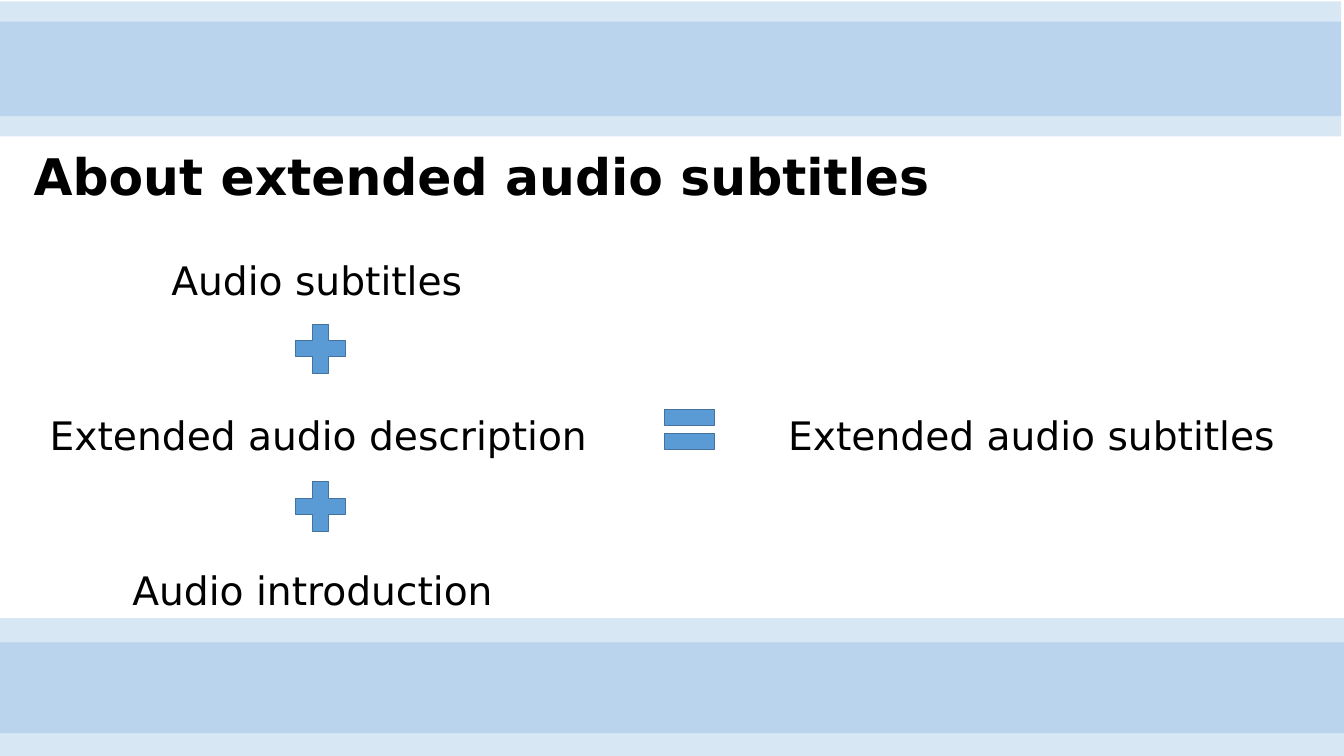
from dataclasses import dataclass

from lxml import etree
from pptx import Presentation
from pptx.dml.color import RGBColor
from pptx.enum.shapes import MSO_SHAPE
from pptx.enum.text import MSO_ANCHOR, MSO_AUTO_SIZE, PP_ALIGN
from pptx.oxml.ns import qn
from pptx.slide import Slide
from pptx.text.text import TextFrame
from pptx.util import Inches, Pt

RECTANGLE, PLUS, EQUAL = MSO_SHAPE.RECTANGLE, MSO_SHAPE.MATH_PLUS, MSO_SHAPE.MATH_EQUAL
MIDDLE, TOP = MSO_ANCHOR.MIDDLE, MSO_ANCHOR.TOP
NO_AUTOFIT, LEFT = MSO_AUTO_SIZE.NONE, PP_ALIGN.LEFT

BLUE = RGBColor(0x5B, 0x9B, 0xD5)
DARK_BLUE = RGBColor(0x43, 0x73, 0x9E)
BLACK = RGBColor(0x00, 0x00, 0x00)
FONT = "DejaVu Sans"

# The slide is a grid of square cells.
COLUMNS, ROWS = 20, 11.25
CELL = Inches(1)
BAND_ROWS = 1.71
BAND_ALPHA = 24
TERM_ROWS = 1.07
FIRST_TERM, TERM_STEP = 3.39, 2.31
FIRST_PLUS, PLUS_STEP = 4.69, 2.35


@dataclass(frozen=True)
class Box:
    col: float
    row: float
    cols: float
    rows: float

    def emu(self) -> tuple[int, ...]:
        return tuple(round(n * CELL) for n in (self.col, self.row, self.cols, self.rows))


@dataclass(frozen=True)
class Term:
    text: str
    col: float
    cols: float
    step: int


BANDS = [
    Box(0, 9.56, COLUMNS, BAND_ROWS),
    Box(0, 9.2, COLUMNS, BAND_ROWS),
    Box(-0.04, 0.02, COLUMNS, BAND_ROWS),
    Box(-0.04, 0.32, COLUMNS, BAND_ROWS),
]
TERMS = [
    Term("Audio subtitles", 2.4, 4.74, 0),
    Term("Extended audio description", 0.59, 8.35, 1),
    Term("Audio introduction", 1.82, 5.9, 2),
    Term("Extended audio subtitles", 11.58, 7.67, 1),
]
OPERATORS = [
    (PLUS, Box(4.27, FIRST_PLUS, 1, 1)),
    (PLUS, Box(4.27, FIRST_PLUS + PLUS_STEP, 1, 1)),
    (EQUAL, Box(9.76, 5.89, 1, 1)),
]


def add_band(s: Slide, box: Box) -> None:
    sp = s.shapes.add_shape(RECTANGLE, *box.emu())
    sp.shadow.inherit = False
    sp.fill.solid()
    sp.fill.fore_color.rgb = BLUE
    color = sp.fill._xPr.find(qn("a:solidFill"))[0]
    etree.SubElement(color, qn("a:alpha"), val=str(BAND_ALPHA * 1000))
    sp.line.fill.background()


def add_operator(s: Slide, kind: MSO_SHAPE, box: Box) -> None:
    sp = s.shapes.add_shape(kind, *box.emu())
    sp.shadow.inherit = False
    sp.fill.solid()
    sp.fill.fore_color.rgb = BLUE
    sp.line.color.rgb = DARK_BLUE
    sp.line.width = Pt(1)


def write_line(tf: TextFrame, text: str, size: int, spacing: float,
               anchor: MSO_ANCHOR, bold: bool = False) -> None:
    tf.word_wrap = True
    tf.auto_size = NO_AUTOFIT
    tf.vertical_anchor = anchor
    tf.margin_left = tf.margin_right = Inches(0.15)
    tf.margin_top = tf.margin_bottom = Inches(0.07)
    p = tf.paragraphs[0]
    p.alignment = LEFT
    p.line_spacing = spacing
    r = p.add_run()
    r.text = text
    r.font.name = FONT
    r.font.size = Pt(size)
    r.font.bold = bold
    r.font.color.rgb = BLACK


def set_title(s: Slide, text: str, box: Box) -> None:
    title = s.shapes.title
    title.left, title.top, title.width, title.height = box.emu()
    write_line(title.text_frame, text, 54, 0.9, MIDDLE, bold=True)


def add_term(s: Slide, term: Term) -> None:
    box = Box(term.col, FIRST_TERM + term.step * TERM_STEP, term.cols, TERM_ROWS)
    sp = s.shapes.add_textbox(*box.emu())
    write_line(sp.text_frame, term.text, 42, 1.5, TOP)


def main() -> None:
    prs = Presentation()
    prs.slide_width, prs.slide_height = COLUMNS * CELL, round(ROWS * CELL)
    title_only = prs.slide_layouts.get_by_name("Title Only")
    s = prs.slides.add_slide(title_only)
    for band in BANDS:
        add_band(s, band)
    set_title(s, "About extended audio subtitles", Box(0.35, 2.09, 18.68, 1.16))
    for term in TERMS:
        add_term(s, term)
    for kind, box in OPERATORS:
        add_operator(s, kind, box)
    prs.save("out.pptx")


if __name__ == "__main__":
    main()
